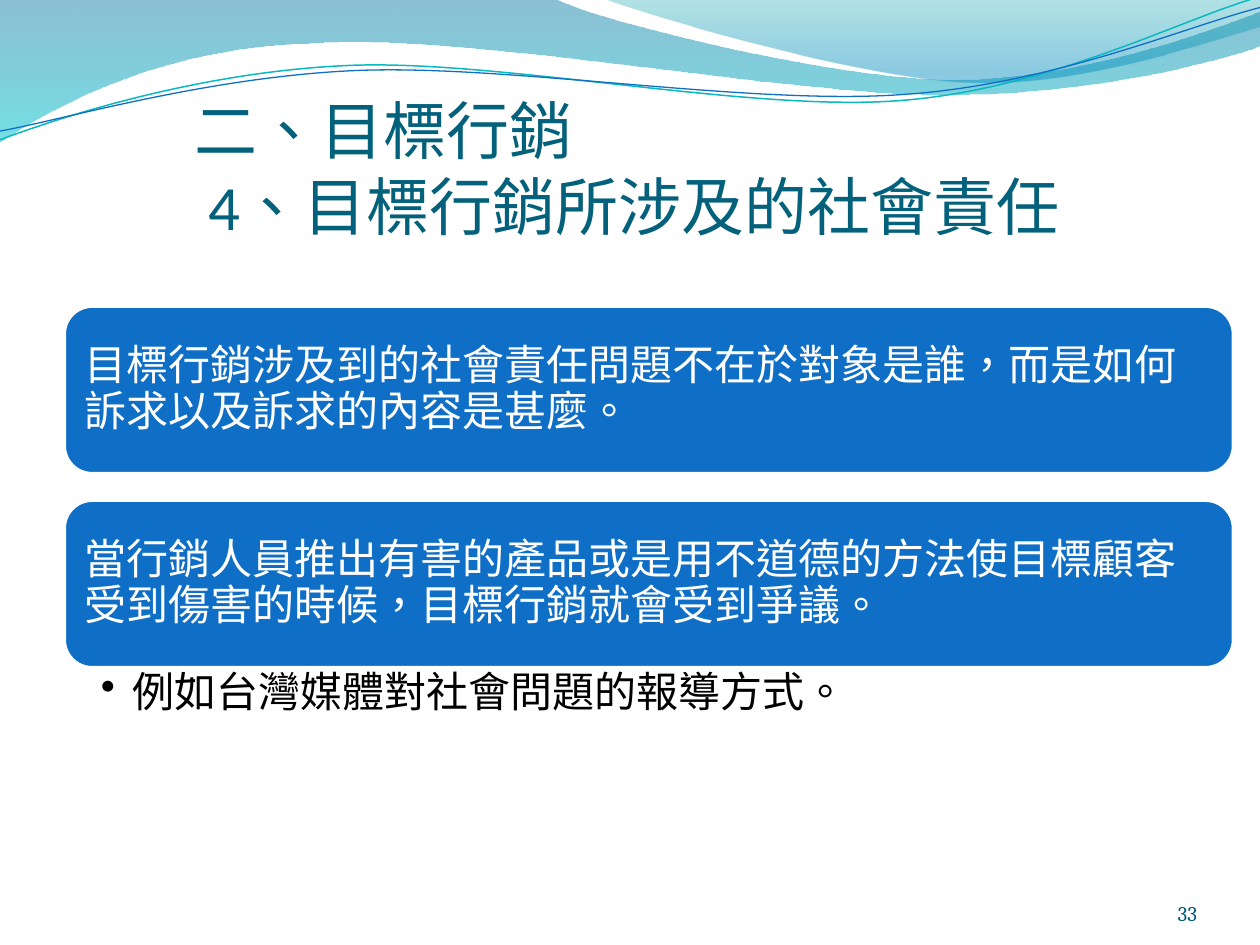
"""Build the slide on the social responsibility of target marketing."""
from dataclasses import dataclass

from lxml import etree
from pptx import Presentation
from pptx import util as u
from pptx.dml.color import RGBColor
from pptx.enum import lang, shapes, text
from pptx.oxml.ns import qn

Point = tuple[float, float]
Segments = list[tuple[Point, ...]]
UNITS = 1000


@dataclass
class Stop:
    position: float
    color: str
    opacity: int


@dataclass
class Band:
    start: Point
    segments: Segments
    stops: list[Stop]


@dataclass
class Wave:
    start: Point
    segments: Segments
    color: str
    width: float


@dataclass
class Style:
    font: str
    size: float
    color: str


BANDS = [
    Band((0, 0), [
        ((4.4, -0.01),),
        ((4.76, 0.17), (6.64, 0.63), (7.58, 0.63)),
        ((8.53, 0.63), (9.58, 0.26), (10, 0.09)),
        ((10.01, 0.36),),
        ((9.83, 0.44), (8.7, 0.76), (7.46, 0.75)),
        ((6.22, 0.75), (3.82, 0.28), (2.57, 0.34)),
        ((1.29, 0.36), (0.46, 0.83), (-0.01, 1.13)),
    ], [Stop(0, "0074A1", 45), Stop(1, "00C6CF", 55)]),
    Band((4.79, -0.01), [
        ((5.09, 0.11), (6.82, 0.62), (7.69, 0.65)),
        ((8.56, 0.69), (9.61, 0.32), (10, 0.21)),
        ((10, 0),),
    ], [Stop(0, "00A1A9", 30), Stop(0.8, "008BBF", 45)]),
]
WAVES = [
    Wave((0, 1.11), [
        ((0.48, 0.93), (1.58, 0.57), (2.77, 0.52)),
        ((3.95, 0.47), (5.93, 0.89), (7.13, 0.8)),
        ((8.33, 0.71), (9.38, 0.15), (9.98, -0.02)),
    ], "0AB8BF", 0.85),
    Wave((0, 1.04), [
        ((0.47, 0.96), (1.64, 0.61), (2.83, 0.56)),
        ((4.03, 0.51), (5.97, 0.84), (7.17, 0.75)),
        ((8.36, 0.67), (9.41, 0.21), (10, 0.06)),
    ], "0F6FC6", 0.75),
]
STATEMENTS = [
    "目標行銷涉及到的社會責任問題不在於對象是誰，而是如何訴求以及訴求的內容是甚麼。",
    "當行銷人員推出有害的產品或是用不道德的方法使目標顧客受到傷害的時候，目標行銷就會受到爭議。",
]
LEFT, WIDTH = 0.51, 9.28
CARD_TOP, CARD_HEIGHT, CARD_STEP = 2.43, 1.33, 1.54


def rgb(color: str) -> RGBColor:
    """Turn a hex string into a colour."""
    return RGBColor.from_string(color)


def add_outline(s, start: Point, segments: Segments, close: bool):
    """Add a freeform of straight lines and cubic curves."""
    points = [(round(x * UNITS), round(y * UNITS)) for segment in segments for x, y in segment]
    builder = s.shapes.build_freeform(*(round(v * UNITS) for v in start),
                                      scale=u.Inches(1) / UNITS)
    builder.add_line_segments(points, close=close)
    sp = builder.convert_to_shape()
    sp.shadow.inherit = False
    lines = iter(list(sp._element.iter(qn("a:lnTo"))))
    for segment in segments:
        first, *rest = [next(lines) for _ in segment]
        if rest:
            first.tag = qn("a:cubicBezTo")
            for line in rest:
                first.append(line[0])
                line.getparent().remove(line)
    return sp


def add_band(s, band: Band) -> None:
    """Add a translucent band that fades from top to bottom."""
    sp = add_outline(s, band.start, band.segments, True)
    sp.line.fill.background()
    sp.fill.gradient()
    sp.fill.gradient_angle = 270
    for target, stop in zip(sp.fill.gradient_stops, band.stops):
        target.position = stop.position
        target.color.rgb = rgb(stop.color)
    for node, stop in zip(sp._element.spPr.iter(qn("a:srgbClr")), band.stops):
        etree.SubElement(node, qn("a:alpha"), val=str(stop.opacity * 1000))


def add_wave(s, wave: Wave) -> None:
    """Add a thin open wave."""
    sp = add_outline(s, wave.start, wave.segments, False)
    sp.fill.background()
    sp.line.color.rgb = rgb(wave.color)
    sp.line.width = u.Pt(wave.width)


def write(sp, words: str, style: Style, anchor: text.MSO_ANCHOR,
          insets: tuple[float, float, float, float],
          align: text.PP_ALIGN = text.PP_ALIGN.LEFT):
    """Put styled words in a shape and return the paragraph."""
    tf = sp.text_frame
    tf.word_wrap = True
    tf.vertical_anchor = anchor
    tf.margin_left, tf.margin_top, tf.margin_right, tf.margin_bottom = map(u.Inches, insets)
    tf.text = words
    p = tf.paragraphs[0]
    p.alignment = align
    for r in p.runs:
        r.font.name = style.font
        r.font.size = u.Pt(style.size)
        r.font.color.rgb = rgb(style.color)
        r.font.language_id = lang.MSO_LANGUAGE_ID.TRADITIONAL_CHINESE
    return p


def add_box(s, left: float, top: float, width: float, height: float):
    """Add a text box."""
    return s.shapes.add_textbox(*map(u.Inches, (left, top, width, height)))


def add_card(s, top: float, words: str) -> None:
    """Add a rounded card with a statement."""
    sp = s.shapes.add_shape(shapes.MSO_SHAPE.ROUNDED_RECTANGLE,
                            *map(u.Inches, (LEFT, top, WIDTH, CARD_HEIGHT)))
    sp.shadow.inherit = False
    sp.fill.solid()
    sp.fill.fore_color.rgb = rgb("0F6FC6")
    sp.line.color.rgb = rgb("FFFFFF")
    sp.line.width = u.Pt(2)
    p = write(sp, words, Style("Cambria", 24, "FFFFFF"), text.MSO_ANCHOR.MIDDLE,
              (0.1, 0.1, 0.1, 0.1))
    p.line_spacing = 0.9
    p.space_after = u.Pt(8.4)


def add_example(s, top: float, words: str) -> None:
    """Add a bulleted example below the cards."""
    p = write(add_box(s, LEFT, top, WIDTH, 1.18), words, Style("Cambria", 24, "000000"),
              text.MSO_ANCHOR.TOP, (0.29, 0.03, 0.19, 0.03))
    p.level = 1
    p.line_spacing = 0.9
    p.space_after = u.Pt(4.8)
    props = p._p.get_or_add_pPr()
    props.set("marL", str(u.Inches(0.25)))
    props.set("indent", str(u.Inches(-0.25)))
    etree.SubElement(props, qn("a:buChar"), char="•")


def main() -> None:
    """Build and save the slide."""
    prs = Presentation()
    prs.slide_width, prs.slide_height = u.Inches(10), u.Inches(7.5)
    s = prs.slides.add_slide(prs.slide_layouts[6])
    for band in BANDS:
        add_band(s, band)
    for wave in WAVES:
        add_wave(s, wave)
    write(add_box(s, 1.54, 0.68, 8.25, 1.25), "二、目標行銷\v 4、目標行銷所涉及的社會責任",
          Style("Calibri", 36, "04617B"), text.MSO_ANCHOR.BOTTOM, (0, 0.05, 0, 0))
    for i, words in enumerate(STATEMENTS):
        add_card(s, CARD_TOP + i * CARD_STEP, words)
    add_example(s, 5.3, "例如台灣媒體對社會問題的報導方式。")
    write(add_box(s, 8.67, 6.95, 0.83, 0.4), "33", Style("Cambria", 12, "045D75"),
          text.MSO_ANCHOR.BOTTOM, (0, 0, 0, 0), text.PP_ALIGN.RIGHT)
    prs.save("out.pptx")


if __name__ == "__main__":
    main()
